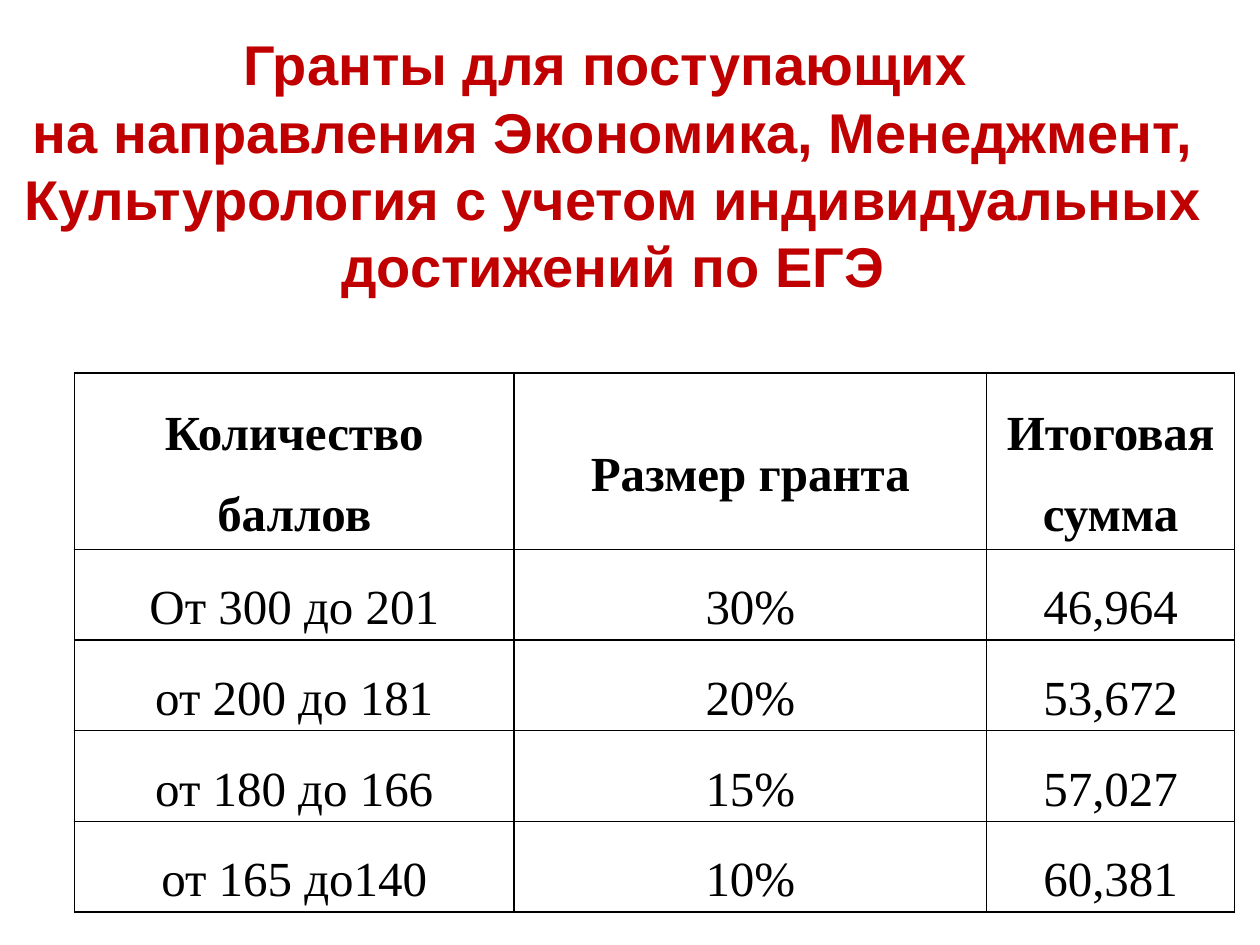
from lxml.etree import SubElement
from pptx import Presentation
from pptx.dml.color import RGBColor
from pptx.enum.text import MSO_ANCHOR, MSO_AUTO_SIZE, PP_ALIGN
from pptx.oxml.ns import qn
from pptx.util import Inches, Pt

RED = RGBColor(0xC0, 0x00, 0x00)
BLACK = RGBColor(0x00, 0x00, 0x00)

HEADING = [
    "Гранты для поступающих ",
    "на направления Экономика, Менеджмент, Культурология "
    "с учетом индивидуальных достижений по ЕГЭ",
]
GRANTS = [
    ("Количество баллов", "Размер гранта", "Итоговая сумма"),
    ("От 300 до 201", "30%", "46,964"),
    ("от 200 до 181", "20%", "53,672"),
    ("от 180 до 166", "15%", "57,027"),
    ("от 165 до140", "10%", "60,381"),
]
COLUMN_WIDTHS = (3.49, 3.75, 1.97)
HEADER_HEIGHT, ROW_HEIGHT = 1.4, 0.72


def write_text(frame, lines, *, font, size, color, bold=False, spacing=1.0):
    """Fill a text frame with centred paragraphs, one for each line."""
    for index, line in enumerate(lines):
        paragraph = frame.add_paragraph() if index else frame.paragraphs[0]
        paragraph.alignment = PP_ALIGN.CENTER
        paragraph.line_spacing = spacing
        run = paragraph.add_run()
        run.text = line
        run.font.name = font
        run.font.size = Pt(size)
        run.font.bold = bold
        run.font.color.rgb = color


def add_heading(slide):
    title = slide.shapes.title
    title.left, title.top = Inches(0), Inches(0.17)
    title.width, title.height = Inches(9.73), Inches(2.56)
    frame = title.text_frame
    frame.word_wrap = True
    frame.auto_size = MSO_AUTO_SIZE.NONE
    frame.vertical_anchor = MSO_ANCHOR.MIDDLE
    frame.margin_bottom = Inches(0.34)
    write_text(frame, HEADING, font="Arial", size=32, color=RED, bold=True)


def set_borders(cell, color, width):
    properties = cell._tc.get_or_add_tcPr()
    for position, side in enumerate(("a:lnL", "a:lnR", "a:lnT", "a:lnB")):
        line = SubElement(properties, qn(side), w=str(Pt(width)))
        fill = SubElement(line, qn("a:solidFill"))
        SubElement(fill, qn("a:srgbClr"), val=str(color))
        properties.remove(line)
        properties.insert(position, line)


def format_cell(cell, text, bold):
    cell.fill.background()
    cell.vertical_anchor = MSO_ANCHOR.MIDDLE
    cell.margin_left = cell.margin_right = Inches(0.07)
    cell.margin_top = cell.margin_bottom = 0
    write_text(cell.text_frame, [text], font="Times New Roman", size=28,
               color=BLACK, bold=bold, spacing=1.5)
    set_borders(cell, BLACK, 1)


def add_grant_table(slide):
    heights = [HEADER_HEIGHT] + [ROW_HEIGHT] * (len(GRANTS) - 1)
    table = slide.shapes.add_table(
        len(GRANTS), len(COLUMN_WIDTHS), Inches(0.59), Inches(2.96),
        Inches(sum(COLUMN_WIDTHS)), Inches(sum(heights))).table
    table.horz_banding = False
    for column, width in zip(table.columns, COLUMN_WIDTHS):
        column.width = Inches(width)
    for row_index, (row, height, texts) in enumerate(
            zip(table.rows, heights, GRANTS)):
        row.height = Inches(height)
        for cell, text in zip(row.cells, texts):
            format_cell(cell, text, bold=row_index == 0)


def main():
    presentation = Presentation()
    presentation.slide_width = Inches(10)
    presentation.slide_height = Inches(7.5)
    title_only = presentation.slide_layouts[5]
    slide = presentation.slides.add_slide(title_only)
    add_heading(slide)
    add_grant_table(slide)
    presentation.save("out.pptx")


if __name__ == "__main__":
    main()
